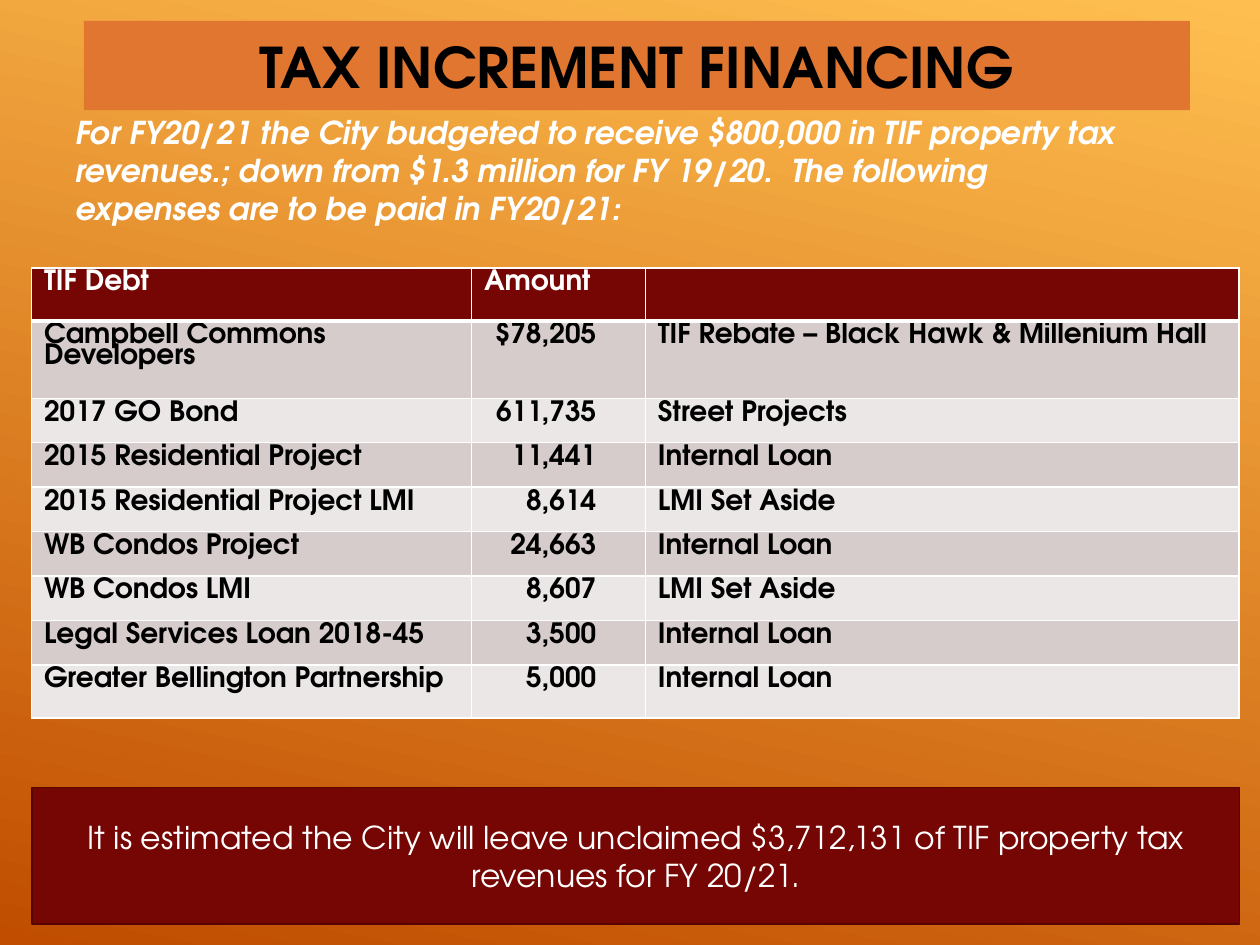
from lxml.etree import SubElement as Sub
from pptx import Presentation
from pptx.dml.color import RGBColor
from pptx.enum.shapes import MSO_SHAPE as Shape
from pptx.enum.text import MSO_ANCHOR as Anchor, PP_ALIGN as Align
from pptx.oxml.ns import qn
from pptx.util import Pt

WHITE, BLACK, MAROON = "FFFFFF", "000000", "760603"
BANDS = ("D6CCCC", "ECE7E7")
FONT = "TeX Gyre Adventor"


def color(code):
    return RGBColor.from_string(code)


class Deck:
    """Holds the style and the current slide."""

    def __init__(self, wide, high):
        self.prs = Presentation()
        self.prs.slide_width, self.prs.slide_height = Pt(wide), Pt(high)
        self.slide = self.prs.slides.add_slide(self.prs.slide_layouts[6])

    def back(self, start, end, angle):
        fill = self.slide.background.fill
        fill.gradient()
        fill.gradient_angle = angle
        for stop, code in zip(fill.gradient_stops, (start, end)):
            stop.color.rgb = color(code)

    def label(self, frame, text, size, code, bold=False, slant=False, align=Align.LEFT):
        frame.word_wrap = True
        para = frame.paragraphs[0]
        para.text, para.alignment = text, align
        font = para.font
        font.name, font.size, font.bold, font.italic = FONT, Pt(size), bold, slant
        font.color.rgb = color(code)
        return para

    def text(self, box, text, size, code, **style):
        frame = self.slide.shapes.add_textbox(*map(Pt, box)).text_frame
        self.label(frame, text, size, code, **style)

    def panel(self, box, fill, text, size, code, line=None, bold=False):
        rect = self.slide.shapes.add_shape(Shape.RECTANGLE, *map(Pt, box))
        rect.shadow.inherit = False
        rect.fill.solid()
        rect.fill.fore_color.rgb = color(fill)
        if line:
            rect.line.color.rgb, rect.line.width = color(line), Pt(1)
        else:
            rect.line.fill.background()
        rect.text_frame.vertical_anchor = Anchor.MIDDLE
        self.label(rect.text_frame, text, size, code, bold=bold, align=Align.CENTER)

    def edge(self, cell, side, width):
        line = Sub(cell._tc.get_or_add_tcPr(), qn("a:ln" + side), w=str(Pt(width)))
        Sub(Sub(line, qn("a:solidFill")), qn("a:srgbClr"), val=WHITE)

    def table(self, left, top, cols, rows, data):
        grid = self.slide.shapes.add_table(
            len(rows), len(cols), Pt(left), Pt(top), Pt(sum(cols)), Pt(sum(rows))).table
        for col, width in zip(grid.columns, cols):
            col.width = Pt(width)
        for r, (high, line) in enumerate(zip(rows, data)):
            grid.rows[r].height = Pt(high)
            for c, text in enumerate(line):
                cell = grid.cell(r, c)
                # The rule under the header is heavier
                for side in "LRTB":
                    heavy = (r, side) in ((0, "B"), (1, "T"))
                    self.edge(cell, side, 3 if heavy else 1)
                cell.fill.solid()
                cell.fill.fore_color.rgb = color(BANDS[(r - 1) % 2] if r else MAROON)
                amount = r > 0 and c == 1
                if amount:
                    cell.margin_right = Pt(28)
                para = self.label(cell.text_frame, text, 16, BLACK if r else WHITE,
                                  bold=True, align=Align.RIGHT if amount else Align.LEFT)
                para.line_spacing = 0.8


def main():
    deck = Deck(720, 540)
    deck.back("FFBF50", "C04D00", 258)

    # Title
    deck.panel((48, 12, 632, 51), "E17630", "TAX INCREMENT FINANCING", 32, BLACK, bold=True)

    # Debt table
    loan, aside = "Internal Loan", "LMI Set Aside"
    data = [
        ("TIF Debt", "Amount", ""),
        ("Campbell Commons Developers", "$78,205", "TIF Rebate – Black Hawk & Millenium Hall"),
        ("2017 GO Bond", "611,735", "Street Projects"),
        ("2015 Residential Project", "11,441", loan),
        ("2015 Residential Project LMI", "8,614", aside),
        ("WB Condos Project", "24,663", loan),
        ("WB Condos LMI", "8,607", aside),
        ("Legal Services Loan 2018-45", "3,500", loan),
        ("Greater Bellington Partnership", "5,000", loan),
    ]
    rows = [30.2, 44.2] + [25.4] * 6 + [30.2]
    deck.table(18, 153.2, (251.4, 99.4, 339.2), rows, data)

    # Introduction
    deck.text((36, 61.2, 618, 73),
              "For FY20/21 the City budgeted to receive $800,000 in TIF property tax "
              "revenues.; down from $1.3 million for FY 19/20.  The following "
              "expenses are to be paid in FY20/21:", 18, WHITE, bold=True, slant=True)

    # Closing note
    deck.panel((18.4, 450, 690, 78), MAROON,
               "It is estimated the City will leave unclaimed $3,712,131 of TIF "
               "property tax revenues for FY 20/21.", 18, WHITE, line="570402")

    deck.prs.save("out.pptx")


if __name__ == "__main__":
    main()
